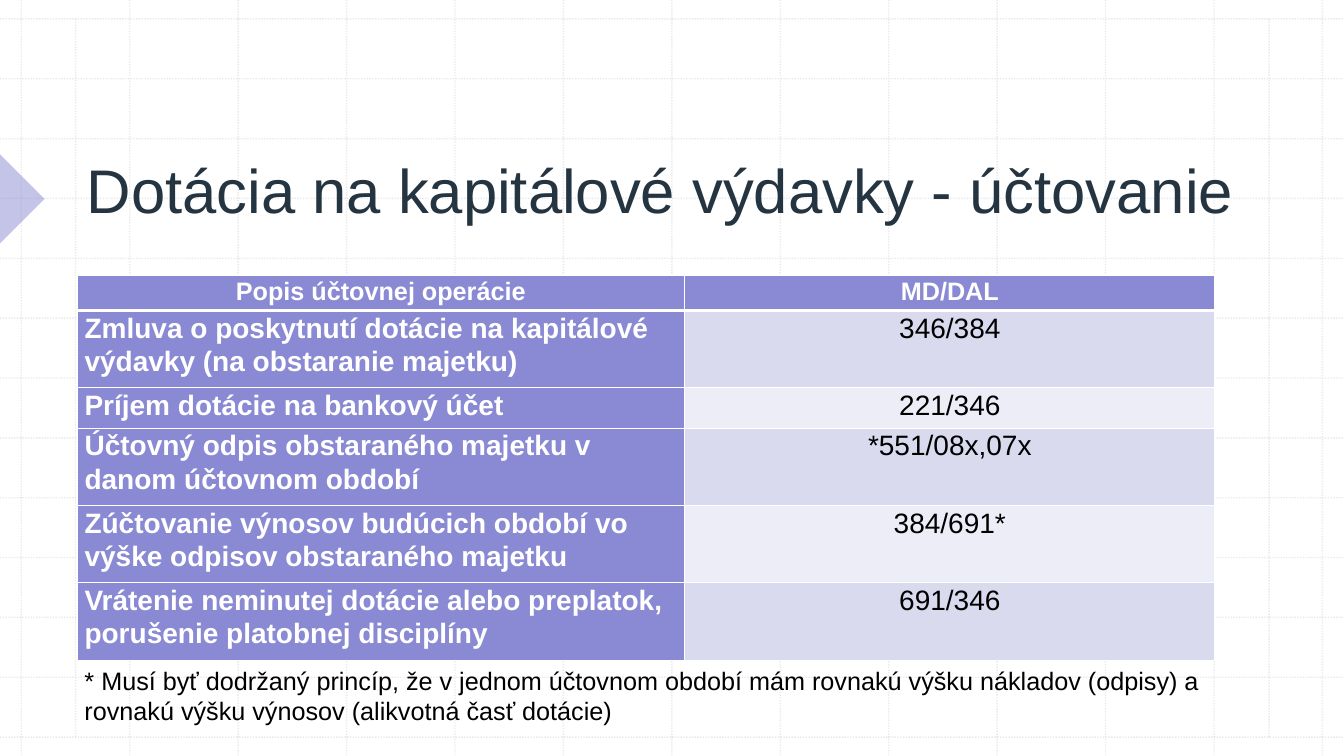
"""Build a slide on posting a capital grant, with a table over a dotted grid."""
from dataclasses import dataclass

from lxml import etree
from pptx import Presentation
from pptx.dml.color import RGBColor
from pptx.enum.dml import MSO_LINE
from pptx.enum.shapes import MSO_CONNECTOR, MSO_SHAPE
from pptx.enum.text import MSO_ANCHOR, MSO_AUTO_SIZE, PP_ALIGN
from pptx.oxml.ns import qn
from pptx.slide import Slide
from pptx.table import _Cell
from pptx.text.text import TextFrame
from pptx.util import Pt

DOT = MSO_LINE.ROUND_DOT
LINE = MSO_CONNECTOR.STRAIGHT
WEDGE = MSO_SHAPE.RIGHT_TRIANGLE
LEFT, MID = PP_ALIGN.LEFT, PP_ALIGN.CENTER
TOP, BASE = MSO_ANCHOR.TOP, MSO_ANCHOR.BOTTOM
FIXED = MSO_AUTO_SIZE.NONE

WHITE = RGBColor(0xFF, 0xFF, 0xFF)
BLACK = RGBColor(0, 0, 0)
GREY = RGBColor(0xBC, 0xBC, 0xBC)
NAVY = RGBColor(0x24, 0x34, 0x41)
LILAC = RGBColor(0x8A, 0x89, 0xD3)
BANDS = RGBColor(0xDA, 0xDA, 0xEF), RGBColor(0xED, 0xED, 0xF7)

FONT = "Arial"
WIDE, HIGH = 960, 540
COLS = 434.2, 378.7
HEAD = "Popis účtovnej operácie", "MD/DAL"


@dataclass(frozen=True)
class Rule:
    x1: float
    y1: float
    x2: float
    y2: float


@dataclass(frozen=True)
class Entry:
    label: str
    code: str
    height: float


@dataclass(frozen=True)
class Style:
    size: float
    color: RGBColor
    bold: bool = False
    align: PP_ALIGN = LEFT
    lead: float = 1.0
    after: float = 0


GRID = [
    *(Rule(x, 0, x, HIGH) for x in (15.2 + 77.45 * i for i in range(13))),
    *(Rule(0, y, WIDE, y) for y in (13.5 + 42.75 * i for i in range(13))),
    *(Rule(x, 13.5, x, 526.5) for x in (54, 906.5)),
]
ROWS = [
    Entry("Zmluva o poskytnutí dotácie na kapitálové výdavky (na obstaranie majetku)", "346/384", 55.2),
    Entry("Príjem dotácie na bankový účet", "221/346", 29),
    Entry("Účtovný odpis obstaraného majetku v danom účtovnom období", "*551/08x,07x", 55.2),
    Entry("Zúčtovanie výnosov budúcich období vo výške odpisov obstaraného majetku", "384/691*", 55.2),
    Entry("Vrátenie neminutej dotácie alebo preplatok, porušenie platobnej disciplíny", "691/346", 55.2),
]
NOTE = ("* Musí byť dodržaný princíp, že v jednom účtovnom období mám rovnakú výšku nákladov "
        "(odpisy) a rovnakú výšku výnosov (alikvotná časť dotácie)")


def write(frame: TextFrame, text: str, style: Style) -> None:
    para = frame.paragraphs[0]
    para.alignment = style.align
    para.line_spacing = style.lead
    para.space_before = Pt(0)
    para.space_after = Pt(style.after)
    run = para.add_run()
    run.text = text
    run.font.name = FONT
    run.font.size = Pt(style.size)
    run.font.bold = style.bold
    run.font.color.rgb = style.color


def fade(node: etree._Element, share: int) -> None:
    for tint in node.iter(qn("a:srgbClr")):
        etree.SubElement(tint, qn("a:alpha"), val=str(share * 1000))


def draw_rule(slide: Slide, rule: Rule) -> None:
    ends = (Pt(v) for v in (rule.x1, rule.y1, rule.x2, rule.y2))
    link = slide.shapes.add_connector(LINE, *ends)
    link.line.color.rgb = GREY
    link.line.width = Pt(1)
    link.line.dash_style = DOT
    fade(link.element, 30)
    etree.SubElement(link.element.find(qn("p:spPr")), qn("a:effectLst"))


def draw_wedge(slide: Slide) -> None:
    wedge = slide.shapes.add_shape(WEDGE, Pt(-22.5), Pt(119.5), Pt(45), Pt(45))
    wedge.rotation = 225
    wedge.shadow.inherit = False
    wedge.fill.solid()
    wedge.fill.fore_color.rgb = LILAC
    fade(wedge.element, 50)
    wedge.line.fill.background()


def draw_title(slide: Slide) -> None:
    title = slide.shapes.title
    title.left, title.top, title.width, title.height = Pt(54.7), Pt(57), Pt(851), Pt(108.7)
    frame = title.text_frame
    frame.vertical_anchor = BASE
    frame.word_wrap = True
    frame.auto_size = FIXED
    write(frame, "Dotácia na kapitálové výdavky - účtovanie", Style(44, NAVY, lead=0.9))
    title.element.getparent().append(title.element)


def edge(cell: _Cell, side: str, width: float) -> etree._Element:
    line = etree.SubElement(cell._tc.get_or_add_tcPr(), qn(f"a:ln{side}"), w=str(Pt(width)))
    fill = etree.SubElement(line, qn("a:solidFill"))
    etree.SubElement(fill, qn("a:srgbClr"), val=str(WHITE))
    return line


def draw_cell(cell: _Cell, text: str, fill: RGBColor, style: Style, above: float, below: float) -> None:
    cell.margin_left = cell.margin_right = Pt(5.4)
    cell.margin_top = cell.margin_bottom = 0
    cell.vertical_anchor = TOP
    for side, width in (("L", 1), ("R", 1), ("T", above), ("B", below)):
        edge(cell, side, width)
    cell.fill.solid()
    cell.fill.fore_color.rgb = fill
    write(cell.text_frame, text, style)


def draw_table(slide: Slide) -> None:
    frame = slide.shapes.add_table(len(ROWS) + 1, 2, Pt(55), Pt(196.8), Pt(sum(COLS)), Pt(275))
    table = frame.table
    for col, width in zip(table.columns, COLS):
        col.width = Pt(width)
    table.rows[0].height = Pt(25)
    head = Style(18, WHITE, True, MID, 1.07, 8)
    label = Style(20, WHITE, True, LEFT, 1.07, 8)
    code = Style(20, BLACK, False, MID, 1.07, 8)
    for col, text in enumerate(HEAD):
        draw_cell(table.cell(0, col), text, LILAC, head, 1, 3)
    for row, entry in enumerate(ROWS, 1):
        table.rows[row].height = Pt(entry.height)
        above = 3 if row == 1 else 1
        draw_cell(table.cell(row, 0), entry.label, LILAC, label, above, 1)
        draw_cell(table.cell(row, 1), entry.code, BANDS[(row - 1) % 2], code, above, 1)


def draw_note(slide: Slide) -> None:
    box = slide.shapes.add_textbox(Pt(53.3), Pt(471.6), Pt(833), Pt(51))
    box.text_frame.word_wrap = True
    write(box.text_frame, NOTE, Style(18, BLACK))


def main() -> None:
    deck = Presentation()
    deck.slide_width, deck.slide_height = Pt(WIDE), Pt(HIGH)
    slide = deck.slides.add_slide(deck.slide_layouts.get_by_name("Title Only"))
    for rule in GRID:
        draw_rule(slide, rule)
    draw_wedge(slide)
    draw_title(slide)
    draw_table(slide)
    draw_note(slide)
    deck.save("out.pptx")


if __name__ == "__main__":
    main()
